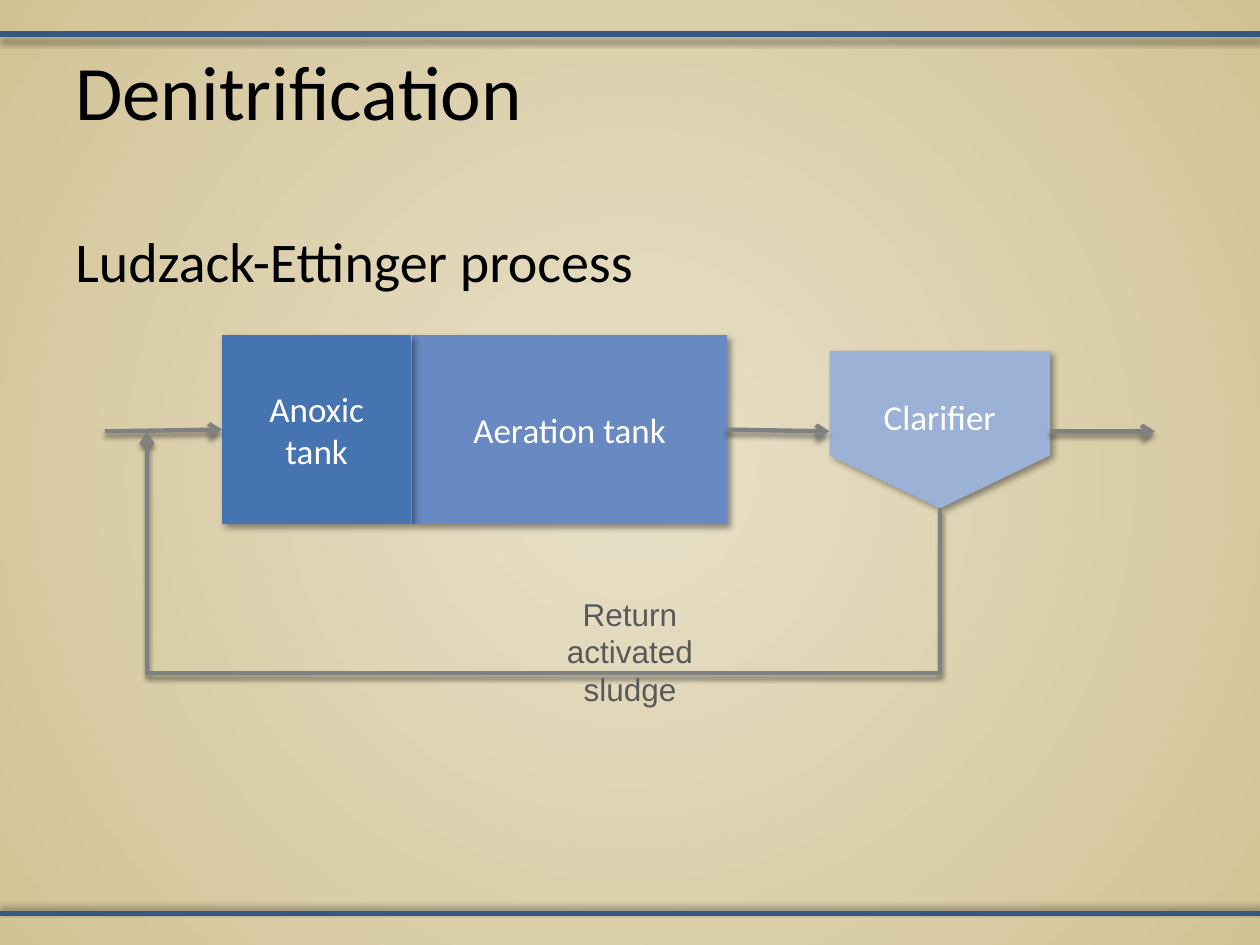
from lxml import etree
from pptx import Presentation
from pptx.dml.color import RGBColor
from pptx.enum.shapes import MSO_CONNECTOR, MSO_SHAPE
from pptx.enum.text import MSO_ANCHOR, MSO_AUTO_SIZE, PP_ALIGN
from pptx.oxml import parse_xml
from pptx.oxml.ns import nsdecls, qn
from pptx.util import Pt

WIDTH, HEIGHT = 720, 540
GREY = "808080"


def color(value):
    return RGBColor.from_string(value)


def set_background(page, center, edge):
    """Radial gradient from the middle of the page outwards."""
    page._element.cSld.insert(0, parse_xml(
        f'<p:bg {nsdecls("p", "a")}><p:bgPr><a:gradFill rotWithShape="1"><a:gsLst>'
        f'<a:gs pos="0"><a:srgbClr val="{center}"/></a:gs>'
        f'<a:gs pos="100000"><a:srgbClr val="{edge}"/></a:gs></a:gsLst>'
        '<a:path path="circle"><a:fillToRect l="50000" t="50000" r="50000" b="50000"/>'
        '</a:path></a:gradFill><a:effectLst/></p:bgPr></p:bg>'))


def add_shadow(shape, opacity, blur, distance, angle):
    shape._element.spPr.append(parse_xml(
        f'<a:effectLst {nsdecls("a")}><a:outerShdw blurRad="{Pt(blur)}" '
        f'dist="{Pt(distance)}" dir="{angle * 60000}" rotWithShape="0">'
        f'<a:srgbClr val="000000"><a:alpha val="{opacity * 1000}"/></a:srgbClr>'
        '</a:outerShdw></a:effectLst>'))


def write(frame, text, size, font, ink, align=PP_ALIGN.LEFT):
    frame.word_wrap = True
    para = frame.paragraphs[0]
    para.text = text
    para.alignment = align
    para.font.size = Pt(size)
    para.font.name = font
    para.font.color.rgb = color(ink)


def add_text(page, left, top, width, height, *style):
    box = page.shapes.add_textbox(Pt(left), Pt(top), Pt(width), Pt(height))
    write(box.text_frame, *style)
    return box


def add_line(page, kind, start, end, ink, weight):
    line = page.shapes.add_connector(kind, *map(Pt, start + end))
    line.line.color.rgb = color(ink)
    line.line.width = Pt(weight)
    return line


def add_arrow(page, start, end, kind=MSO_CONNECTOR.STRAIGHT):
    arrow = add_line(page, kind, start, end, GREY, 2.5)
    etree.SubElement(arrow.line._get_or_add_ln(), qn("a:tailEnd"), type="arrow")
    add_shadow(arrow, 45, 3, 2.4, 90)
    return arrow


def add_return_arrow(page, start, end, bottom):
    """Elbow that leaves downwards, runs left along bottom and rises to end."""
    (x1, y1), (x2, y2) = start, end
    rise, run = y1 - y2, x1 - x2
    left, top = (x1 + x2 - rise) / 2, (y1 + y2 - run) / 2
    arrow = add_arrow(page, (left, top), (left + rise, top + run), MSO_CONNECTOR.ELBOW)
    arrow.rotation = 90
    arrow._element.spPr.xfrm.set("flipH", "1")
    geometry = arrow._element.spPr.find(qn("a:prstGeom"))
    geometry.set("prst", "bentConnector4")
    guides = geometry.find(qn("a:avLst"))
    drop = round((y1 - bottom) / rise * 100000)
    for name, value in (("adj1", drop), ("adj2", 100000)):
        etree.SubElement(guides, qn("a:gd"), name=name, fmla=f"val {value}")


def add_tank(page, kind, left, top, width, height, fill, text):
    tank = page.shapes.add_shape(kind, Pt(left), Pt(top), Pt(width), Pt(height))
    tank.fill.solid()
    tank.fill.fore_color.rgb = color(fill)
    tank.line.fill.background()
    add_shadow(tank, 40, 4, 3, 45)
    tank.text_frame.vertical_anchor = MSO_ANCHOR.MIDDLE
    write(tank.text_frame, text, 20, "Calibri", "FFFFFF", PP_ALIGN.CENTER)
    return tank


def add_bands(page, top, bottom):
    for y, angle in ((top, 90), (bottom, 270)):
        band = add_line(page, MSO_CONNECTOR.STRAIGHT, (0, y), (WIDTH, y), "355784", 3)
        add_shadow(band, 40, 4, 3, angle)


def add_headings(page, left, top, width):
    add_text(page, left, top, width, 90, "Denitrification", 44, "Calibri", "000000")
    add_text(page, left, top + 104.5, width, 60,
             "Ludzack-Ettinger process", 32, "Calibri", "000000")


def add_process(page, left, top, width):
    tank_height = 108
    anoxic, anoxic_width = left + 67, 108
    aeration, aeration_width = anoxic + anoxic_width + 0.5, 180
    clarifier, clarifier_width, clarifier_height = left + 414, 126, 90
    clarifier_top = top + 9
    flow = top + 55

    # Tanks
    add_tank(page, MSO_SHAPE.RECTANGLE, aeration, top, aeration_width, tank_height,
             "6989C2", "Aeration tank")
    add_tank(page, MSO_SHAPE.RECTANGLE, anoxic, top, anoxic_width, tank_height,
             "4674B0", "Anoxic tank")

    # Clarifier: a pentagon turned to point down, with its text kept upright
    turn = (clarifier_width - clarifier_height) / 2
    pentagon = add_tank(page, MSO_SHAPE.PENTAGON, clarifier + turn, clarifier_top - turn,
                        clarifier_height, clarifier_width, "9BB1D6", "Clarifier")
    pentagon.rotation = 90
    pentagon.adjustments[0] = 0.336
    pentagon.text_frame._txBody.bodyPr.set("vert", "vert270")

    # Flow from inlet to outlet
    tank_middle = top + tank_height / 2
    add_arrow(page, (left, flow), (anoxic, tank_middle))
    add_arrow(page, (aeration + aeration_width, tank_middle), (clarifier, flow))
    add_arrow(page, (clarifier + clarifier_width, flow), (left + width, flow))

    # Return sludge
    add_return_arrow(page,
                     (clarifier + clarifier_width / 2, clarifier_top + clarifier_height),
                     (left + 24, flow), top + 193)
    label_width = 80.6
    label = add_text(page, left + (width - label_width) / 2, top + 144.7, label_width, 72.7,
                     "Return activated sludge", 18, "Arial", "595959", PP_ALIGN.CENTER)
    frame = label.text_frame
    frame.margin_left = frame.margin_right = Pt(0.72)
    frame.auto_size = MSO_AUTO_SIZE.SHAPE_TO_FIT_TEXT


def main():
    deck = Presentation()
    deck.slide_width, deck.slide_height = Pt(WIDTH), Pt(HEIGHT)
    page = deck.slides.add_slide(deck.slide_layouts[6])
    set_background(page, "E8E0C8", "D2C396")
    add_bands(page, 19.5, 522)
    add_headings(page, 36, 21.5, 648)
    add_process(page, 60, 191.5, 600)
    deck.save("out.pptx")


if __name__ == "__main__":
    main()
